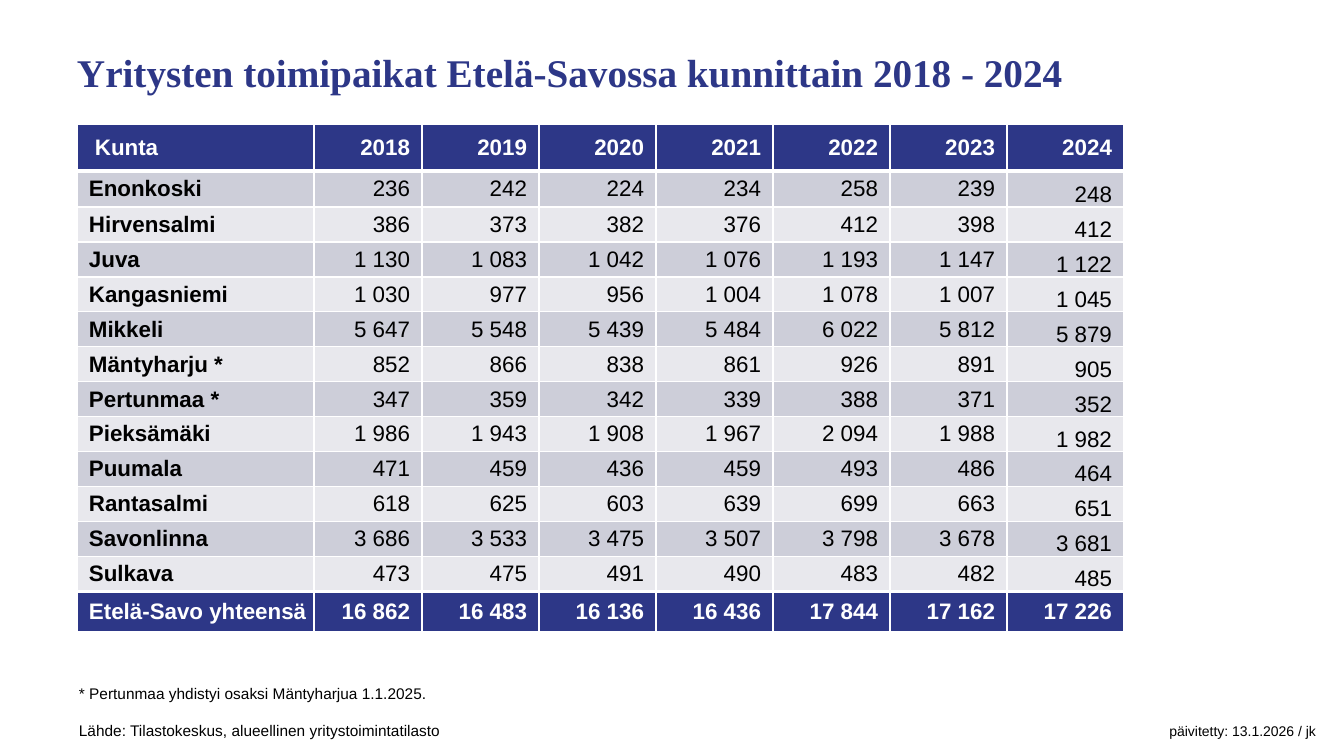
from dataclasses import dataclass

from lxml import etree
from pptx import Presentation
from pptx import util as u
from pptx.dml.color import RGBColor
from pptx.enum import text
from pptx.oxml.ns import qn

TITLE = "Yritysten toimipaikat Etelä-Savossa kunnittain 2018 - 2024"
HEADER = ["Kunta", "2018", "2019", "2020", "2021", "2022", "2023", "2024"]
MUNICIPALITIES = [
    ("Enonkoski", 236, 242, 224, 234, 258, 239, 248),
    ("Hirvensalmi", 386, 373, 382, 376, 412, 398, 412),
    ("Juva", 1130, 1083, 1042, 1076, 1193, 1147, 1122),
    ("Kangasniemi", 1030, 977, 956, 1004, 1078, 1007, 1045),
    ("Mikkeli", 5647, 5548, 5439, 5484, 6022, 5812, 5879),
    ("Mäntyharju *", 852, 866, 838, 861, 926, 891, 905),
    ("Pertunmaa *", 347, 359, 342, 339, 388, 371, 352),
    ("Pieksämäki", 1986, 1943, 1908, 1967, 2094, 1988, 1982),
    ("Puumala", 471, 459, 436, 459, 493, 486, 464),
    ("Rantasalmi", 618, 625, 603, 639, 699, 663, 651),
    ("Savonlinna", 3686, 3533, 3475, 3507, 3798, 3678, 3681),
    ("Sulkava", 473, 475, 491, 490, 483, 482, 485),
]
TOTAL = ("Etelä-Savo yhteensä", 16862, 16483, 16136, 16436, 17844, 17162, 17226)
FOOTNOTE = "* Pertunmaa yhdistyi osaksi Mäntyharjua 1.1.2025."
SOURCE = "Lähde: Tilastokeskus, alueellinen yritystoimintatilasto"
UPDATED = "päivitetty: 13.1.2026 / jk"

COLUMN_WIDTHS = [237, 108] + [117] * 6
ROW_HEIGHTS = [47, 36] + [35] * 11 + [40]


@dataclass(frozen=True)
class Theme:
    navy: str = "2D3787"
    band_dark: str = "CDCED9"
    band_light: str = "E8E8ED"
    white: str = "FFFFFF"
    black: str = "000000"
    heading_font: str = "Times New Roman"
    body_font: str = "Arial"
    title_size: int = 28
    table_size: int = 16
    note_size: int = 11
    updated_size: int = 10
    thin_line: int = 1
    thick_line: int = 3


THEME = Theme()


def px(length):
    return u.Emu(round(length * 914400 / 100.8))


def style(font, name, size, color, bold=False):
    font.name, font.size, font.bold = name, u.Pt(size), bold
    font.color.rgb = RGBColor.from_string(color)


def add_borders(cell, top, bottom):
    """Draw white cell borders; top and bottom are widths in points."""
    sides = {"L": THEME.thin_line, "R": THEME.thin_line, "T": top, "B": bottom}
    for side, width in sides.items():
        line = etree.SubElement(cell._tc.get_or_add_tcPr(), qn(f"a:ln{side}"), w=str(u.Pt(width)))
        fill = etree.SubElement(line, qn("a:solidFill"))
        etree.SubElement(fill, qn("a:srgbClr"), val=THEME.white)


def add_title(slide):
    title = slide.shapes.title
    title.left, title.top, title.width, title.height = px(77), px(44), px(1104), px(56)
    frame = title.text_frame
    frame.text = TITLE
    frame.auto_size = text.MSO_AUTO_SIZE.NONE
    frame.vertical_anchor = text.MSO_ANCHOR.BOTTOM
    frame.margin_left = frame.margin_top = frame.margin_right = 0
    frame.margin_bottom = px(5)
    frame.paragraphs[0].alignment = text.PP_ALIGN.LEFT
    style(frame.paragraphs[0].runs[0].font, THEME.heading_font, THEME.title_size, THEME.navy, True)


def add_municipality_table(slide):
    rows = [HEADER, *MUNICIPALITIES, TOTAL]
    last_row, last_column = len(rows) - 1, len(HEADER) - 1
    table = slide.shapes.add_table(
        len(rows), len(HEADER), px(77), px(124), px(sum(COLUMN_WIDTHS)), px(sum(ROW_HEIGHTS))
    ).table
    for column, width in zip(table.columns, COLUMN_WIDTHS):
        column.width = px(width)
    for row, height in zip(table.rows, ROW_HEIGHTS):
        row.height = px(height)

    for r, values in enumerate(rows):
        emphasized = r in (0, last_row)
        band = THEME.band_dark if r % 2 else THEME.band_light
        top = THEME.thick_line if r in (1, last_row) else THEME.thin_line
        bottom = THEME.thick_line if r in (0, last_row - 1) else THEME.thin_line
        for c, value in enumerate(values):
            cell = table.cell(r, c)
            add_borders(cell, top, bottom)
            cell.fill.solid()
            cell.fill.fore_color.rgb = RGBColor.from_string(THEME.navy if emphasized else band)
            cell.margin_top = cell.margin_bottom = 0
            name_indent = 18 if r == 0 else 12
            cell.margin_left = px(name_indent if c == 0 else 0)
            cell.margin_right = px(0 if c == 0 else 12)
            latest = c == last_column and not emphasized
            cell.vertical_anchor = text.MSO_ANCHOR.BOTTOM if latest else text.MSO_ANCHOR.MIDDLE
            cell.text = value if isinstance(value, str) else f"{value:,}".replace(",", " ")
            paragraph = cell.text_frame.paragraphs[0]
            paragraph.alignment = text.PP_ALIGN.RIGHT if c else text.PP_ALIGN.LEFT
            style(paragraph.runs[0].font, THEME.body_font, THEME.table_size,
                  THEME.white if emphasized else THEME.black, emphasized or c == 0)


def add_notes_line(slide):
    """Place the footnote, the source and the right-aligned update date."""
    frame = slide.shapes.add_textbox(px(69), px(679), px(1262), px(64)).text_frame
    frame.word_wrap = True
    frame.text = FOOTNOTE
    source = frame.add_paragraph()
    source.space_before = u.Pt(13)
    tabs = etree.SubElement(source._p.get_or_add_pPr(), qn("a:tabLst"))
    etree.SubElement(tabs, qn("a:tab"), pos=str(px(1237)), algn="r")
    source.text = SOURCE + "\t"
    updated = source.add_run()
    updated.text = UPDATED
    for paragraph in frame.paragraphs:
        for run in paragraph.runs:
            style(run.font, THEME.body_font, THEME.note_size, THEME.black)
    updated.font.size = u.Pt(THEME.updated_size)


def main():
    deck = Presentation()
    deck.slide_width, deck.slide_height = px(1344), px(756)
    slide = deck.slides.add_slide(deck.slide_layouts[5])
    add_title(slide)
    add_notes_line(slide)
    add_municipality_table(slide)
    deck.save("out.pptx")


if __name__ == "__main__":
    main()
